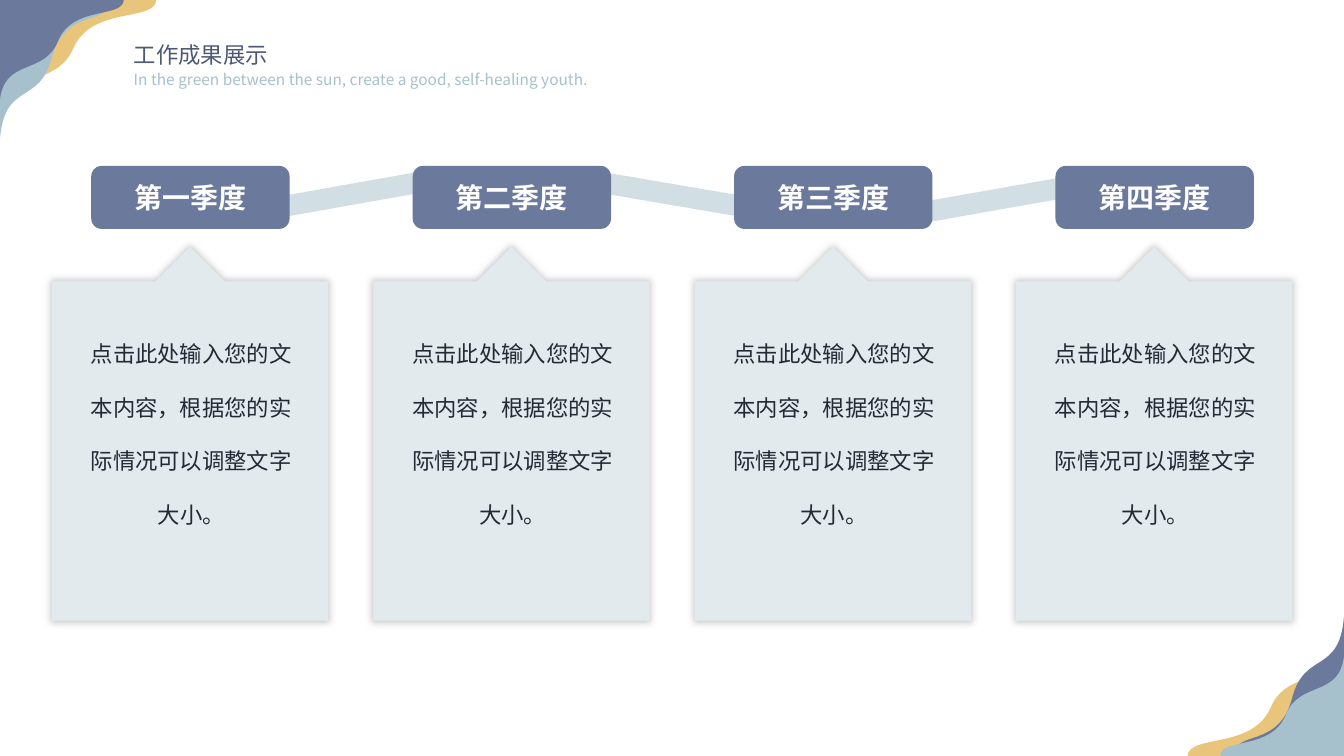
import pptx
import pptx.dml.color
import pptx.enum.shapes
import pptx.enum.text
import pptx.oxml
import pptx.oxml.ns
import pptx.util
from lxml import etree

Cm = pptx.util.Cm
Pt = pptx.util.Pt
RGBColor = pptx.dml.color.RGBColor
MSO_SHAPE = pptx.enum.shapes.MSO_SHAPE
PP_ALIGN = pptx.enum.text.PP_ALIGN
MSO_ANCHOR = pptx.enum.text.MSO_ANCHOR
qn = pptx.oxml.ns.qn

INDIGO = RGBColor(0x6B, 0x79, 0x9C)
DARK_INDIGO = RGBColor(0x4E, 0x59, 0x76)
MIST = RGBColor(0xA6, 0xC1, 0xCC)
GOLD = RGBColor(0xE9, 0xC5, 0x7B)
CARD_FILL = RGBColor(0xE2, 0xEA, 0xEE)
LINK = RGBColor(0xD1, 0xDF, 0xE5)
INK = RGBColor(0x22, 0x2A, 0x35)
WHITE = RGBColor(0xFF, 0xFF, 0xFF)

FONT = "Noto Sans CJK SC"
SLIDE_WIDTH, SLIDE_HEIGHT = 33.87, 19.05
COLUMN_PITCH = 8.1
QUARTERS = ["第一季度", "第二季度", "第三季度", "第四季度"]
CARD_TEXT = "点击此处输入您的文本内容，根据您的实际情况可以调整文字大小。"
LINKS = [(6.25, 5.36, 11.1, 4.5), (19.46, 5.33, 14.58, 4.5), (22.94, 5.41, 27.81, 4.55)]
CORNER_SIZES = [(3.94, 2.95), (2.79, 3.51), (3.12, 2.51)]

# Start of a corner's wave, then two curves of three points each,
# as fractions of the corner's width and height
WAVE = [(1, 0),
        (0.99, 0.19), (0.59, 0.05), (0.47, 0.41),
        (0.36, 0.76), (0.04, 0.58), (0, 1)]


def set_text(shape, text, size, color, align=PP_ALIGN.LEFT, anchor=MSO_ANCHOR.TOP,
             bold=False, line_spacing=None):
    frame = shape.text_frame
    frame.text = text
    frame.word_wrap = True
    frame.auto_size = pptx.enum.text.MSO_AUTO_SIZE.NONE
    frame.vertical_anchor = anchor
    paragraph = frame.paragraphs[0]
    paragraph.alignment = align
    paragraph.line_spacing = line_spacing
    font = paragraph.font
    font.size, font.bold, font.name = Pt(size), bold, FONT
    font.color.rgb = color
    properties = paragraph._p.get_or_add_pPr().get_or_add_defRPr()
    etree.SubElement(properties, qn("a:ea")).set("typeface", FONT)


def style_shape(shape, color):
    shape.shadow.inherit = False
    shape.fill.solid()
    shape.fill.fore_color.rgb = color
    shape.line.fill.background()


def add_soft_shadow(shape):
    effects = shape._element.spPr.find(qn("a:effectLst"))
    shadow = etree.SubElement(effects, qn("a:outerShdw"), blurRad=str(Pt(5)), dist="0",
                              sx="101000", sy="101000", algn="ctr", rotWithShape="0")
    color = etree.SubElement(shadow, qn("a:srgbClr"), val="808080")
    etree.SubElement(color, qn("a:alpha"), val="40000")


def add_card(slide, left):
    card = slide.shapes.add_shape(MSO_SHAPE.UP_ARROW_CALLOUT, Cm(left), Cm(6.22),
                                  Cm(6.96), Cm(9.42))
    for index, value in enumerate([0.565, 0.125, 0.125, 0.908]):
        card.adjustments[index] = value
    style_shape(card, CARD_FILL)
    add_soft_shadow(card)
    set_text(card, CARD_TEXT, 16, INK, PP_ALIGN.CENTER, line_spacing=2.0)
    frame = card.text_frame
    frame.margin_left, frame.margin_right = Cm(0.87), Cm(0.81)
    frame.margin_top = Cm(0.8)


def add_badge(slide, left, quarter):
    badge = slide.shapes.add_shape(MSO_SHAPE.ROUNDED_RECTANGLE, Cm(left), Cm(4.18),
                                   Cm(5), Cm(1.59))
    style_shape(badge, INDIGO)
    set_text(badge, quarter, 20, WHITE, PP_ALIGN.CENTER, MSO_ANCHOR.MIDDLE, bold=True)


def add_link(slide, ends):
    link = slide.shapes.add_connector(pptx.enum.shapes.MSO_CONNECTOR.STRAIGHT,
                                      *[Cm(value) for value in ends])
    link.line.color.rgb = LINK
    link.line.width = Pt(15)
    etree.SubElement(link._element.spPr, qn("a:effectLst"))


def merge_into_curve(lines):
    """Turn three successive line segments into one Bezier curve."""
    curve = etree.Element(qn("a:cubicBezTo"))
    lines[0].addprevious(curve)
    for line in lines:
        curve.append(line[0])
        line.getparent().remove(line)


def add_corner(slide, width, height, color, at_bottom_right):
    points = [(x * width, y * height) for x, y in WAVE]
    corner = (0, 0)
    if at_bottom_right:
        points = [(SLIDE_WIDTH - x, SLIDE_HEIGHT - y) for x, y in points]
        corner = (SLIDE_WIDTH, SLIDE_HEIGHT)
    builder = slide.shapes.build_freeform(Cm(corner[0]), Cm(corner[1]))
    builder.add_line_segments([(Cm(x), Cm(y)) for x, y in points], close=True)
    shape = builder.convert_to_shape()
    lines = list(shape._element.iter(qn("a:lnTo")))
    merge_into_curve(lines[1:4])
    merge_into_curve(lines[4:7])
    style_shape(shape, color)


def add_heading(slide):
    title = slide.shapes.title
    title.left, title.top, title.width, title.height = Cm(3.12), Cm(0.91), Cm(9.17), Cm(0.94)
    set_text(title, "工作成果展示", 16, DARK_INDIGO)
    subtitle = slide.shapes.add_textbox(Cm(3.12), Cm(1.65), Cm(13.34), Cm(0.74))
    set_text(subtitle, "In the green between the sun, create a good, self-healing youth.",
             11, MIST)


def main():
    presentation = pptx.Presentation()
    presentation.slide_width = Cm(SLIDE_WIDTH)
    presentation.slide_height = Cm(SLIDE_HEIGHT)
    slide = presentation.slides.add_slide(presentation.slide_layouts.get_by_name("Title Only"))

    add_heading(slide)
    for column in range(len(QUARTERS)):
        add_card(slide, 1.31 + column * COLUMN_PITCH)
    for ends in LINKS:
        add_link(slide, ends)
    for column, quarter in enumerate(QUARTERS):
        add_badge(slide, 2.3 + column * COLUMN_PITCH, quarter)
    for at_bottom_right, colors in [(False, (GOLD, MIST, INDIGO)), (True, (GOLD, INDIGO, MIST))]:
        for (width, height), color in zip(CORNER_SIZES, colors):
            add_corner(slide, width, height, color, at_bottom_right)

    presentation.save("out.pptx")


if __name__ == "__main__":
    main()
